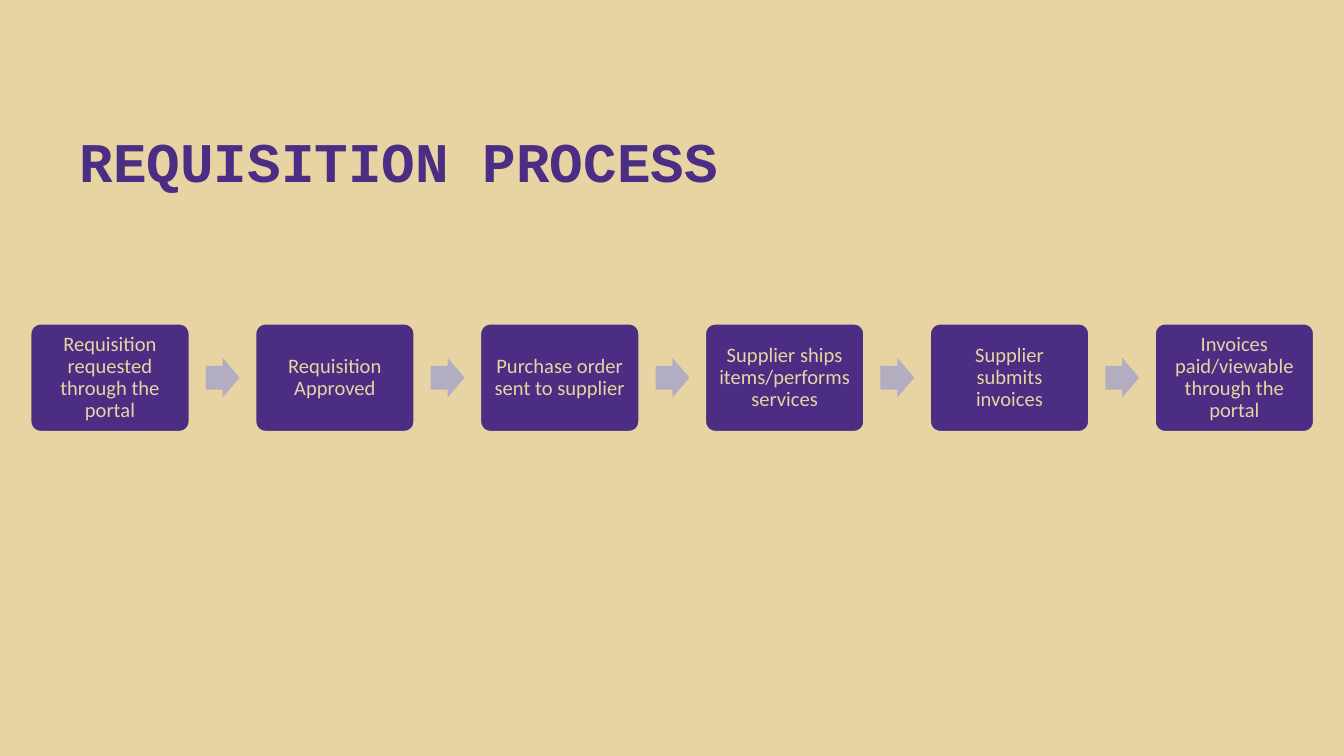
from dataclasses import dataclass

from pptx import Presentation
from pptx.dml.color import RGBColor
from pptx.enum.shapes import MSO_SHAPE
from pptx.enum.text import MSO_ANCHOR, MSO_AUTO_SIZE, PP_ALIGN
from pptx.slide import Slide
from pptx.util import Cm, Pt


@dataclass(frozen=True)
class Theme:
    purple: RGBColor = RGBColor.from_string("4B2E83")
    sand: RGBColor = RGBColor.from_string("E8D3A2")
    lavender: RGBColor = RGBColor.from_string("B2ADC1")
    title_font: str = "Courier New"
    step_font: str = "Calibri"
    title_size: Pt = Pt(30)
    step_size: Pt = Pt(11)
    outline: Pt = Pt(2)


@dataclass(frozen=True)
class Step:
    label: str
    left: float


THEME = Theme()
FIRST_LEFT, PITCH = 0.56, 4.25
STEP_WIDTH, STEP_HEIGHT = 3.04, 2.08
ROW_MIDDLE = 7.14
ARROW_OFFSET, ARROW_WIDTH, ARROW_HEIGHT = 3.33, 0.64, 0.75
LABELS = (
    "Requisition requested through the portal",
    "Requisition Approved",
    "Purchase order sent to supplier",
    "Supplier ships items/performs services",
    "Supplier submits invoices",
    "Invoices paid/viewable through the portal",
)


def write_heading(slide: Slide, wording: str) -> None:
    heading = slide.shapes.title
    heading.left, heading.top = Cm(1.25), Cm(1.02)
    heading.width, heading.height = Cm(22.75), Cm(2.77)
    frame = heading.text_frame
    frame.text = wording
    frame.auto_size = MSO_AUTO_SIZE.NONE
    frame.vertical_anchor = MSO_ANCHOR.BOTTOM
    paragraph = frame.paragraphs[0]
    paragraph.alignment = PP_ALIGN.LEFT
    paragraph.font.name = THEME.title_font
    paragraph.font.size = THEME.title_size
    paragraph.font.bold = True
    paragraph.font.color.rgb = THEME.purple


def draw_step(slide: Slide, step: Step) -> None:
    card = slide.shapes.add_shape(
        MSO_SHAPE.ROUNDED_RECTANGLE,
        Cm(step.left), Cm(ROW_MIDDLE - STEP_HEIGHT / 2),
        Cm(STEP_WIDTH), Cm(STEP_HEIGHT),
    )
    card.adjustments[0] = 0.1
    card.shadow.inherit = False
    card.fill.solid()
    card.fill.fore_color.rgb = THEME.purple
    card.line.color.rgb = THEME.sand
    card.line.width = THEME.outline
    frame = card.text_frame
    frame.text = step.label
    frame.word_wrap = True
    frame.vertical_anchor = MSO_ANCHOR.MIDDLE
    frame.margin_left = frame.margin_right = Cm(0.17)
    frame.margin_top = frame.margin_bottom = Cm(0.17)
    paragraph = frame.paragraphs[0]
    paragraph.alignment = PP_ALIGN.CENTER
    paragraph.line_spacing = 0.9
    paragraph.font.name = THEME.step_font
    paragraph.font.size = THEME.step_size
    paragraph.font.color.rgb = THEME.sand


def draw_arrow(slide: Slide, step: Step) -> None:
    arrow = slide.shapes.add_shape(
        MSO_SHAPE.RIGHT_ARROW,
        Cm(step.left + ARROW_OFFSET), Cm(ROW_MIDDLE - ARROW_HEIGHT / 2),
        Cm(ARROW_WIDTH), Cm(ARROW_HEIGHT),
    )
    arrow.adjustments[0] = 0.6
    arrow.adjustments[1] = 0.5
    arrow.shadow.inherit = False
    arrow.fill.solid()
    arrow.fill.fore_color.rgb = THEME.lavender
    arrow.line.fill.background()


def main() -> None:
    presentation = Presentation()
    presentation.slide_width, presentation.slide_height = Cm(25.4), Cm(14.29)
    slide = presentation.slides.add_slide(presentation.slide_layouts[5])
    slide.background.fill.solid()
    slide.background.fill.fore_color.rgb = THEME.sand
    write_heading(slide, "REQUISITION PROCESS")
    steps = [Step(label, FIRST_LEFT + i * PITCH) for i, label in enumerate(LABELS)]
    for step in steps:
        draw_step(slide, step)
    for step in steps[:-1]:
        draw_arrow(slide, step)
    presentation.save("out.pptx")


if __name__ == "__main__":
    main()
